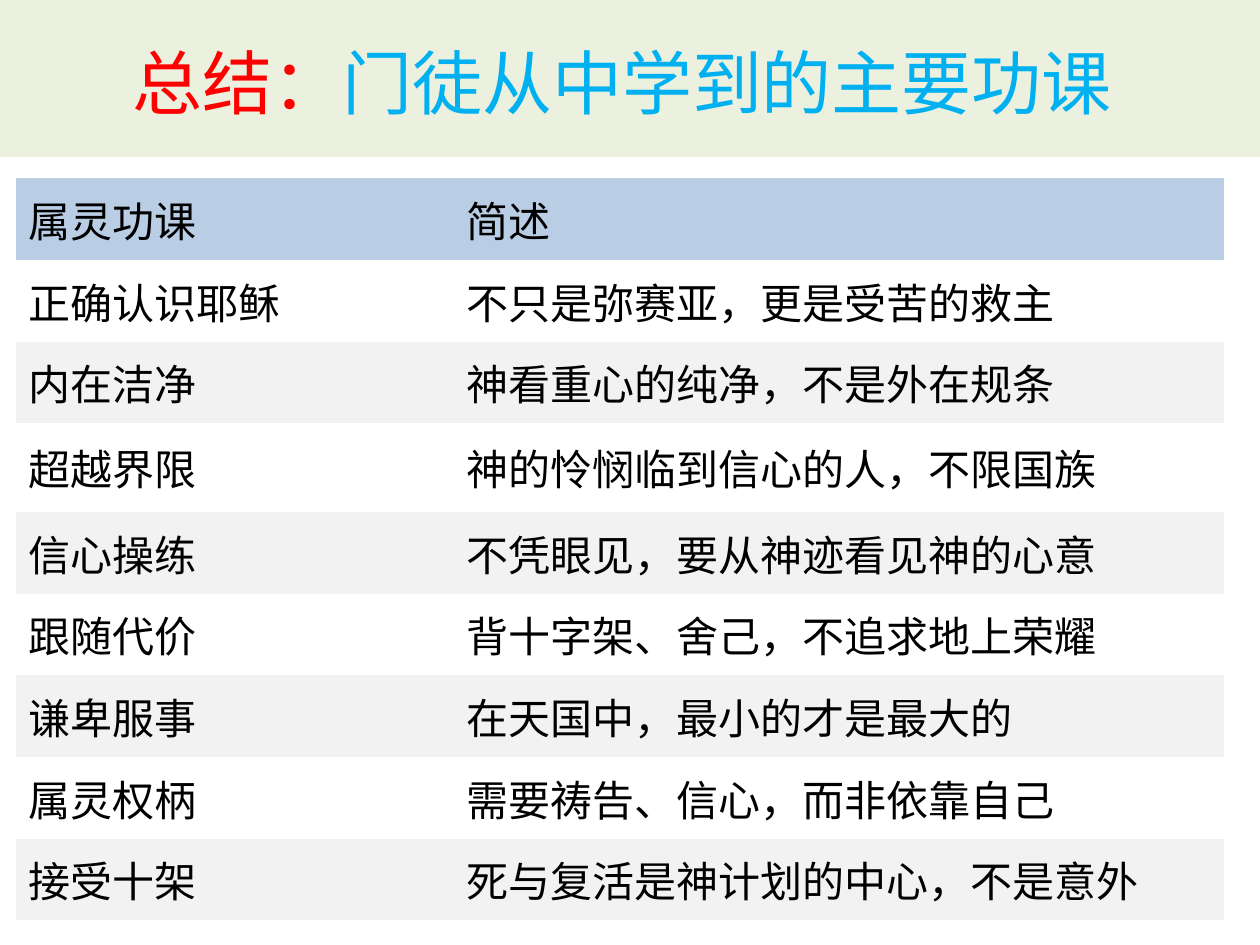
"""Build a summary slide with a title band and a two-column table of lessons."""
from pptx import Presentation
from pptx.dml.color import RGBColor
from pptx.enum.text import MSO_ANCHOR, PP_ALIGN
from pptx.oxml.ns import qn
from pptx.util import Emu, Pt

RED = RGBColor(0xFF, 0x00, 0x00)
SKY = RGBColor(0x00, 0xB0, 0xF0)
BLACK = RGBColor(0x00, 0x00, 0x00)
CREAM = RGBColor(0xEB, 0xF1, 0xDE)
BLUE = RGBColor(0xB9, 0xCD, 0xE5)
GREY = RGBColor(0xF2, 0xF2, 0xF2)
FONT = "Calibri"
PLAIN = "{2D5ABB26-0587-4C30-8999-92F81FD0307C}"

TITLE = [("总结：", RED), ("门徒从中学到的主要功课 ", SKY)]
ROWS = [
    ("属灵功课", "简述"),
    ("正确认识耶稣", "不只是弥赛亚，更是受苦的救主"),
    ("内在洁净", "神看重心的纯净，不是外在规条"),
    ("超越界限", "神的怜悯临到信心的人，不限国族"),
    ("信心操练", "不凭眼见，要从神迹看见神的心意"),
    ("跟随代价", "背十字架、舍己，不追求地上荣耀"),
    ("谦卑服事", "在天国中，最小的才是最大的"),
    ("属灵权柄", "需要祷告、信心，而非依靠自己"),
    ("接受十架", "死与复活是神计划的中心，不是意外"),
]
WIDTHS = [438, 770]
HEIGHTS = [82, 82, 81, 89, 82, 81, 82, 82, 81]


def px(count):
    """Turn px into EMU."""
    return Emu(round(count * 914400 / 126))


def write(para, text, size, color):
    """Add one styled run."""
    run = para.add_run()
    run.text = text
    font = run.font
    font.name, font.size, font.bold = FONT, Pt(size), False
    font.color.rgb = color


def add_title(slide):
    """Place and fill the title band."""
    title = slide.shapes.title
    title.left, title.top = px(0), px(0)
    title.width, title.height = px(1260), px(157)
    title.fill.solid()
    title.fill.fore_color.rgb = CREAM
    frame = title.text_frame
    frame.word_wrap = True
    frame.vertical_anchor = MSO_ANCHOR.MIDDLE
    para = frame.paragraphs[0]
    para.alignment = PP_ALIGN.CENTER
    para.line_spacing = 1.07
    para.space_before = Pt(0)
    for text, color in TITLE:
        write(para, text, 40, color)


def add_lessons(slide):
    """Add the table, shading the header and every second row."""
    table = slide.shapes.add_table(
        len(ROWS), len(WIDTHS), px(16), px(178), px(sum(WIDTHS)), px(sum(HEIGHTS))
    ).table
    table._tbl.tblPr.find(qn("a:tableStyleId")).text = PLAIN
    table.first_row = table.horz_banding = False
    for col, width in zip(table.columns, WIDTHS):
        col.width = px(width)
    for row, height in zip(table.rows, HEIGHTS):
        row.height = px(height)
    for i, texts in enumerate(ROWS):
        for j, text in enumerate(texts):
            cell = table.cell(i, j)
            cell.vertical_anchor = MSO_ANCHOR.MIDDLE
            if i % 2:
                cell.fill.background()
            else:
                cell.fill.solid()
                cell.fill.fore_color.rgb = GREY if i else BLUE
            write(cell.text_frame.paragraphs[0], text, 24, BLACK)


def main():
    """Build and save the deck."""
    deck = Presentation()
    deck.slide_width, deck.slide_height = px(1260), px(945)
    slide = deck.slides.add_slide(deck.slide_layouts[5])
    add_title(slide)
    add_lessons(slide)
    deck.save("out.pptx")


if __name__ == "__main__":
    main()
